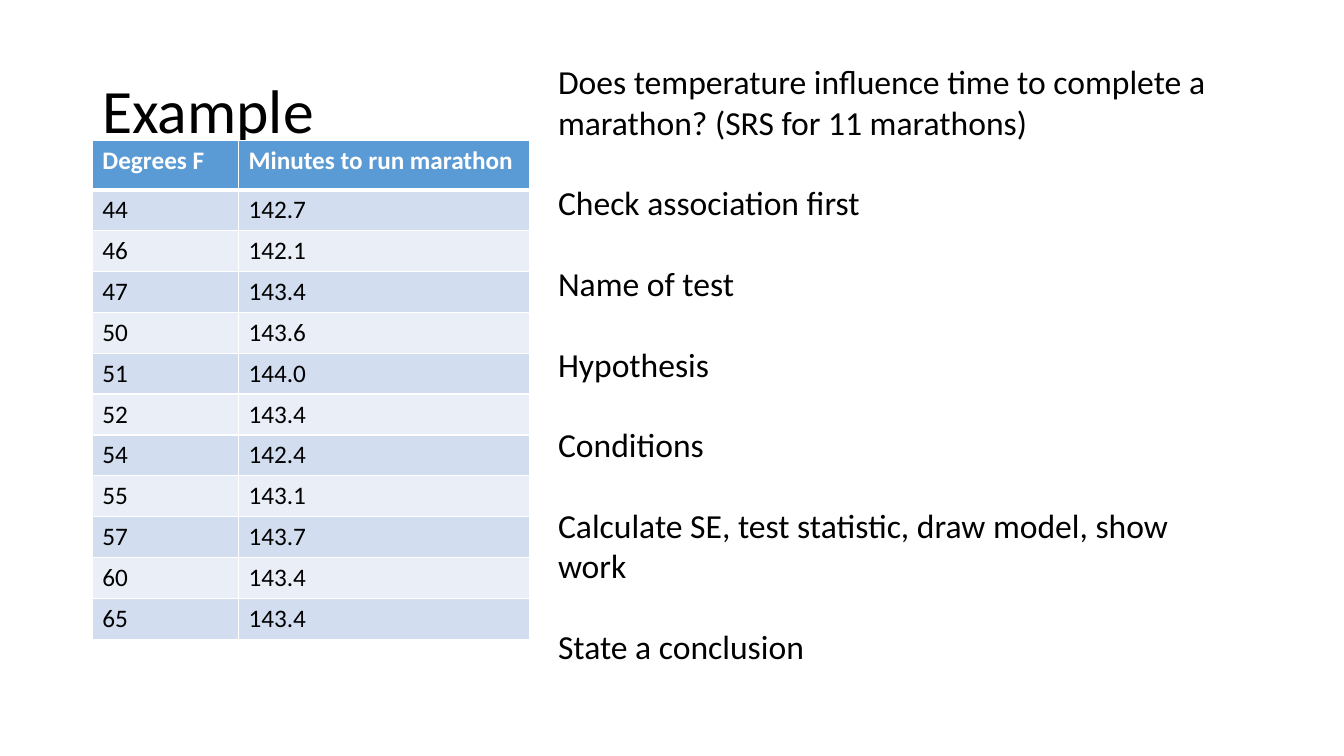
from dataclasses import dataclass

from lxml import etree
from pptx import Presentation
from pptx.dml.color import RGBColor
from pptx.enum.text import MSO_ANCHOR
from pptx.oxml.ns import qn
from pptx.slide import Slide
from pptx.table import _Cell
from pptx.text.text import TextFrame
from pptx.util import Pt

TOP = MSO_ANCHOR.TOP
MIDDLE = MSO_ANCHOR.MIDDLE

BLACK = RGBColor(0x00, 0x00, 0x00)
WHITE = RGBColor(0xFF, 0xFF, 0xFF)
BLUE = RGBColor(0x5B, 0x9B, 0xD5)
BANDS = (RGBColor(0xEA, 0xEF, 0xF7), RGBColor(0xD2, 0xDE, 0xEF))
FONT = "Calibri"

HEADS = ("Degrees F", "Minutes to run marathon")
TIMES = (
    ("44", "142.7"),
    ("46", "142.1"),
    ("47", "143.4"),
    ("50", "143.6"),
    ("51", "144.0"),
    ("52", "143.4"),
    ("54", "142.4"),
    ("55", "143.1"),
    ("57", "143.7"),
    ("60", "143.4"),
    ("65", "143.4"),
)
WIDTHS = (104.4, 208.2)
HEAD_HIGH = 35.1
ROW_HIGH = 29.2


@dataclass
class Block:
    left: float
    top: float
    width: float
    height: float
    size: float
    lines: tuple[str, ...]
    anchor: MSO_ANCHOR = TOP
    gap: float = 0
    pitch: float = 1.0


TITLE = Block(66, 28.75, 828, 104.4, 44, ("Example",), MIDDLE, pitch=0.9)
STEPS = Block(
    391.5, 40.3, 502.6, 509, 24,
    (
        "Does temperature influence time to complete a marathon? (SRS for 11 marathons)",
        "Check association first",
        "Name of test",
        "Hypothesis",
        "Conditions",
        "Calculate SE, test statistic, draw model, show work",
        "State a conclusion",
    ),
    gap=28.8,
)


def style(frame: TextFrame, size: float, color: RGBColor, bold: bool = False) -> None:
    for para in frame.paragraphs:
        for run in para.runs:
            run.font.name = FONT
            run.font.size = Pt(size)
            run.font.bold = bold
            run.font.color.rgb = color


def add_block(slide: Slide, block: Block) -> None:
    box = slide.shapes.add_textbox(
        Pt(block.left), Pt(block.top), Pt(block.width), Pt(block.height)
    )
    frame = box.text_frame
    frame.word_wrap = True
    frame.vertical_anchor = block.anchor
    frame.text = "\n".join(block.lines)
    for place, para in enumerate(frame.paragraphs):
        para.line_spacing = block.pitch
        para.space_before = Pt(block.gap if place else 0)
    style(frame, block.size, BLACK)


def add_edges(cell: _Cell, top: float, bottom: float) -> None:
    props = cell._tc.get_or_add_tcPr()
    for side, width in (("L", 1), ("R", 1), ("T", top), ("B", bottom)):
        line = etree.SubElement(props, qn(f"a:ln{side}"), w=str(Pt(width)))
        fill = etree.SubElement(line, qn("a:solidFill"))
        etree.SubElement(fill, qn("a:srgbClr"), val=str(WHITE))


def add_times(slide: Slide) -> None:
    rows = (HEADS, *TIMES)
    high = HEAD_HIGH + ROW_HIGH * len(TIMES)
    table = slide.shapes.add_table(
        len(rows), len(HEADS), Pt(66), Pt(100.4), Pt(sum(WIDTHS)), Pt(high)
    ).table
    for col, width in zip(table.columns, WIDTHS):
        col.width = Pt(width)
    for at, words in enumerate(rows):
        head = at == 0
        table.rows[at].height = Pt(HEAD_HIGH if head else ROW_HIGH)
        for col, word in enumerate(words):
            cell = table.cell(at, col)
            cell.text_frame.text = word
            style(cell.text_frame, 18, WHITE if head else BLACK, head)
            add_edges(cell, 3 if at == 1 else 1, 3 if head else 1)
            cell.fill.solid()
            cell.fill.fore_color.rgb = BLUE if head else BANDS[at % 2]


def main() -> None:
    deck = Presentation()
    deck.slide_width = Pt(960)
    deck.slide_height = Pt(540)
    slide = deck.slides.add_slide(deck.slide_layouts[6])
    add_block(slide, TITLE)
    add_times(slide)
    add_block(slide, STEPS)
    deck.save("out.pptx")


if __name__ == "__main__":
    main()
